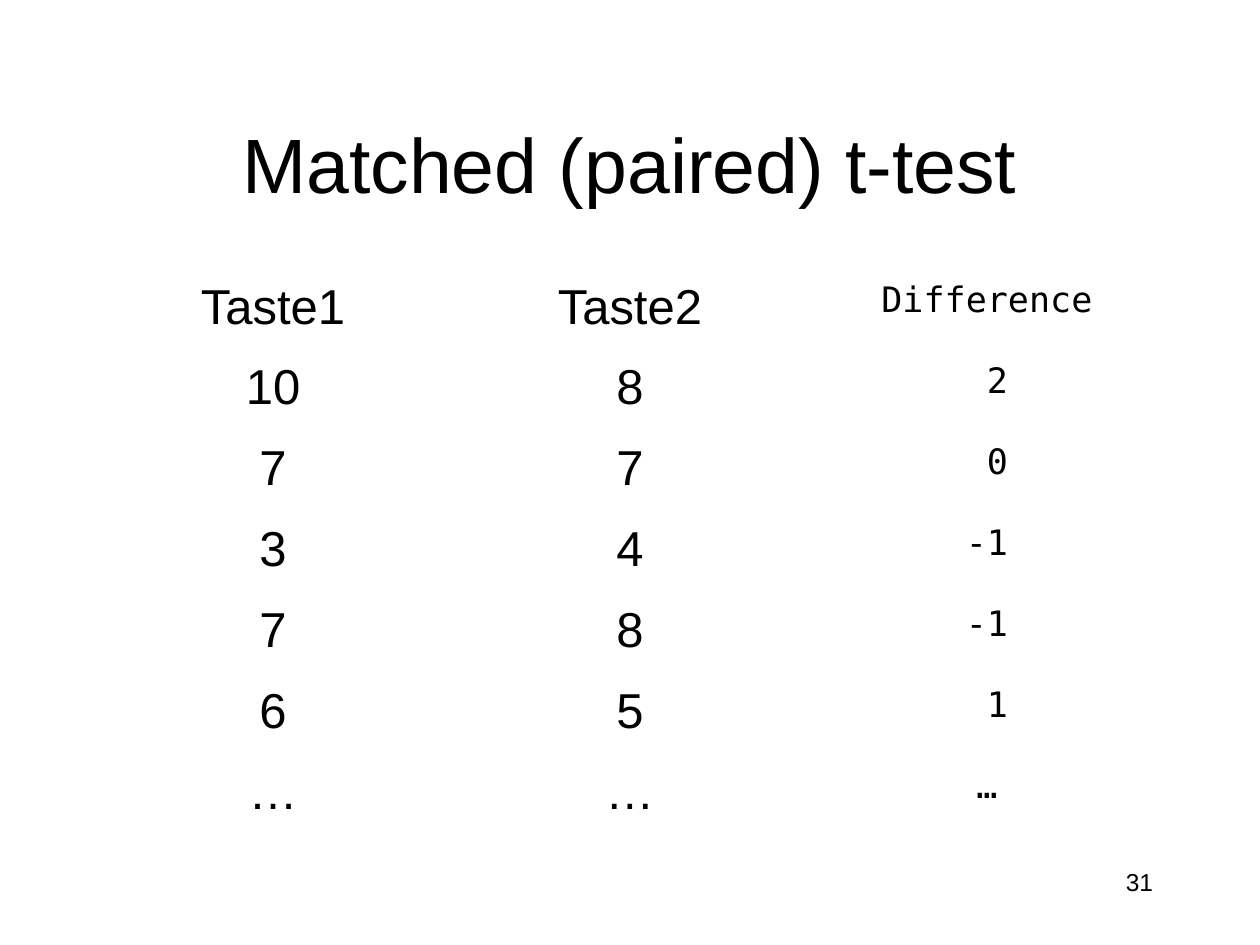
from dataclasses import dataclass

from pptx import Presentation
from pptx.dml.color import RGBColor
from pptx.enum import text
from pptx.util import Inches, Pt


@dataclass(frozen=True)
class Theme:
    ink: RGBColor = RGBColor(0, 0, 0)
    sans: str = "Arial"
    mono: str = "DejaVu Sans Mono"
    title: int = 44
    body: int = 28
    difference: int = 20
    number: int = 14


theme = Theme()


def write(frame, words, font, size, align):
    frame.text = words
    para = frame.paragraphs[0]
    para.alignment = align
    for span in para.runs:
        span.font.name = font
        span.font.size = Pt(size)
        span.font.color.rgb = theme.ink


deck = Presentation()
deck.slide_width, deck.slide_height = Inches(10), Inches(7.5)
page = deck.slides.add_slide(deck.slide_layouts[5])
center, right = text.PP_ALIGN.CENTER, text.PP_ALIGN.RIGHT

# Shared margins
left = Inches(0.75)
width = deck.slide_width - 2 * left

# Title
title = page.shapes.title
title.left, title.top, title.width, title.height = left, Inches(0.67), width, Inches(1.25)
title.text_frame.vertical_anchor = text.MSO_ANCHOR.MIDDLE
write(title.text_frame, "Matched (paired) t-test", theme.sans, theme.title, center)

# Paired scores; the leading space lines up unsigned differences with signed ones
scores = [
    ("Taste1", "Taste2", "Difference"),
    ("10", "8", " 2"),
    ("7", "7", " 0"),
    ("3", "4", "-1"),
    ("7", "8", "-1"),
    ("6", "5", " 1"),
    ("…", "…", "…"),
]
column_styles = [
    (theme.sans, theme.body),
    (theme.sans, theme.body),
    (theme.mono, theme.difference),
]
table = page.shapes.add_table(
    len(scores), len(column_styles), left, Inches(2.17), width, Inches(4.5)
).table
table.first_row = False
table.horz_banding = False
for row, values in zip(table.rows, scores):
    for cell, value, (font, size) in zip(row.cells, values, column_styles):
        cell.fill.background()
        write(cell.text_frame, value, font, size, center)

# Page number, flush with the right margin
number_width = Inches(2.08)
number = page.shapes.add_textbox(
    left + width - number_width, Inches(6.83), number_width, Inches(0.5)
)
number.text_frame.word_wrap = True
write(number.text_frame, "31", theme.sans, theme.number, right)

deck.save("out.pptx")
